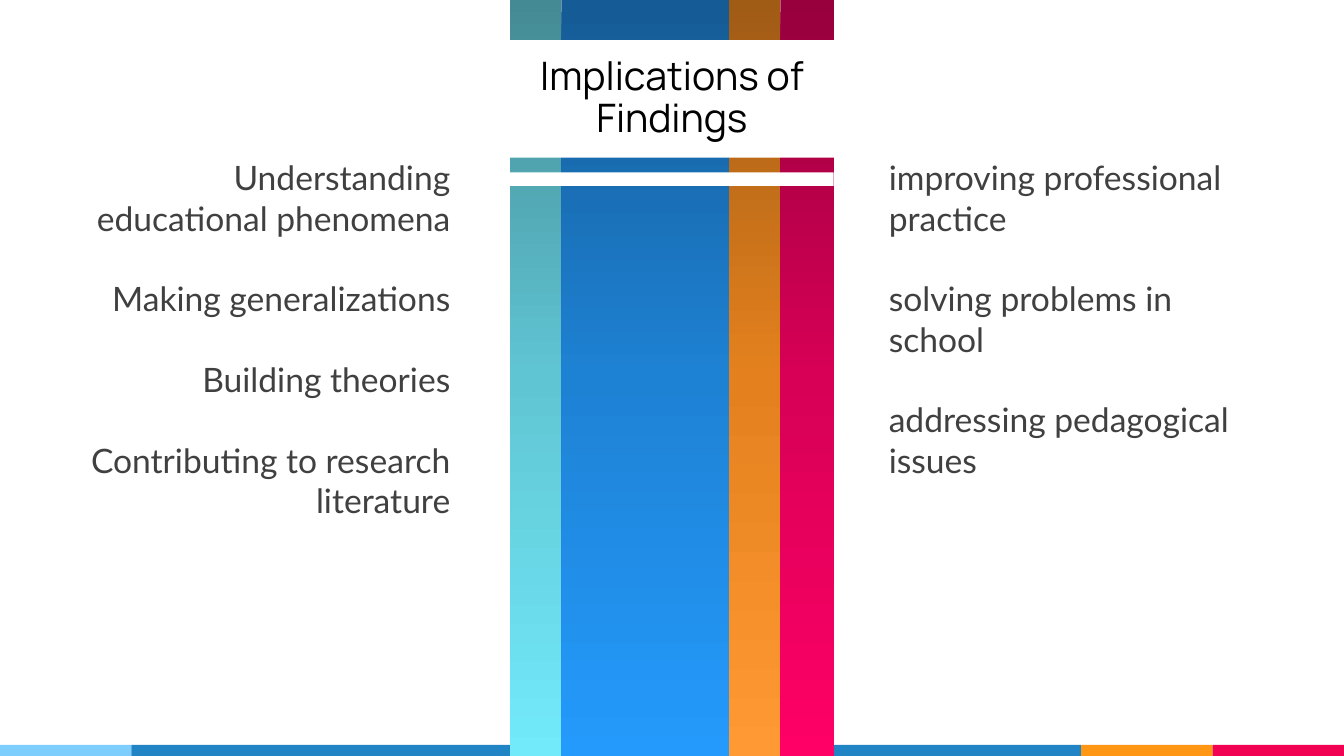
from copy import deepcopy
from pptx import Presentation
from pptx.dml.color import RGBColor
from pptx.enum.shapes import MSO_SHAPE
from pptx.enum.text import MSO_ANCHOR, MSO_AUTO_SIZE, PP_ALIGN
from pptx.util import Pt

# Content
TITLE = "Implications of Findings"
THEORY = [
    "Understanding educational phenomena",
    "Making generalizations",
    "Building theories",
    "Contributing to research literature",
]
PRACTICE = [
    "improving professional practice",
    "solving problems in school",
    "addressing pedagogical issues",
]

# Colours
WHITE = RGBColor(0xFF, 0xFF, 0xFF)
BLACK = RGBColor(0, 0, 0)
GREY = RGBColor(0x40, 0x40, 0x40)
SKY = RGBColor(0x7E, 0xCE, 0xFD)
BLUE = RGBColor(0x21, 0x85, 0xC5)
AMBER = RGBColor(0xFF, 0x97, 0x15)
PINK = RGBColor(0xF2, 0x02, 0x53)
TEAL_FADE = [RGBColor(0x44, 0x8A, 0x94), RGBColor(0x60, 0xC5, 0xD3), RGBColor(0x72, 0xEA, 0xFA)]
BLUE_FADE = [RGBColor(0x15, 0x5B, 0x95), RGBColor(0x1E, 0x82, 0xD4), RGBColor(0x24, 0x9A, 0xFC)]
GOLD_FADE = [RGBColor(0xA0, 0x5B, 0x15), RGBColor(0xE4, 0x81, 0x1E), RGBColor(0xFF, 0x99, 0x33)]
ROSE_FADE = [RGBColor(0x97, 0x00, 0x3C), RGBColor(0xD7, 0x00, 0x56), RGBColor(0xFF, 0x00, 0x66)]

# Widths from left to right, in points
WIDE, HIGH = 960, 540
FOOT = [(93.9, SKY), (678.3, BLUE), (93.9, AMBER), (93.9, PINK)]
BANDS = [(36.5, TEAL_FADE), (120, BLUE_FADE), (36.5, GOLD_FADE), (38.2, ROSE_FADE)]
LEFT = 364.4
SPAN = sum(wide for wide, _ in BANDS)
FOOT_TOP = 532
LIST_TOP, LIST_WIDE, LIST_HIGH = 105.1, 286.5, 396
LINE = 28.8

TITLE_FONT = {"name": "Manrope", "size": Pt(28)}
LIST_FONT = {"name": "Lato", "size": Pt(24)}

deck = Presentation()
deck.slide_width, deck.slide_height = Pt(WIDE), Pt(HIGH)
slide = deck.slides.add_slide(deck.slide_layouts[5])


def add_bar(x, y, wide, high, color=WHITE):
    bar = slide.shapes.add_shape(MSO_SHAPE.RECTANGLE, Pt(x), Pt(y), Pt(wide), Pt(high))
    bar.shadow.inherit = False
    bar.line.fill.background()
    bar.fill.solid()
    bar.fill.fore_color.rgb = color
    return bar


def fade(bar, colors):
    bar.fill.gradient()
    bar.fill.gradient_angle = 270
    stops = bar._element.xpath(".//a:gsLst")[0]
    stops.append(deepcopy(stops[0]))
    for i, (stop, color) in enumerate(zip(bar.fill.gradient_stops, colors)):
        stop.position = i / 2
        stop.color.rgb = color


def style(para, look, color):
    for key, value in look.items():
        setattr(para.font, key, value)
    para.font.color.rgb = color


def add_list(x, lines, align):
    box = slide.shapes.add_textbox(Pt(x), Pt(LIST_TOP), Pt(LIST_WIDE), Pt(LIST_HIGH))
    frame = box.text_frame
    frame.word_wrap = True
    for side in ("left", "top", "right", "bottom"):
        setattr(frame, f"margin_{side}", Pt(7.2))
    frame.text = "\n".join(lines)
    for i, para in enumerate(frame.paragraphs):
        para.alignment = align
        para.space_before = Pt(LINE if i else 0)
        style(para, LIST_FONT, GREY)


# Strip along the foot
x = 0
for wide, color in FOOT:
    add_bar(x, FOOT_TOP, wide, HIGH - FOOT_TOP, color)
    x += wide

# Lists on both sides
add_list(42.2, THEORY, PP_ALIGN.RIGHT)
add_list(627.8, PRACTICE, PP_ALIGN.LEFT)

# Column of fading bands, cut by a white rule
x = LEFT
for wide, colors in BANDS:
    fade(add_bar(x, 0, wide, HIGH), colors)
    x += wide
add_bar(LEFT, 123.1, SPAN, 9.6)

# Title on a white panel, in front of the bands
title = slide.shapes.title
slide.shapes._spTree.append(title._element)
title.left, title.top, title.width, title.height = Pt(LEFT), Pt(28.6), Pt(SPAN), Pt(84)
title.fill.solid()
title.fill.fore_color.rgb = WHITE
title.text = TITLE
frame = title.text_frame
frame.word_wrap = True
frame.auto_size = MSO_AUTO_SIZE.NONE
frame.vertical_anchor = MSO_ANCHOR.MIDDLE
para = frame.paragraphs[0]
para.alignment = PP_ALIGN.CENTER
para.line_spacing = 0.9
style(para, TITLE_FONT, BLACK)

deck.save("out.pptx")
